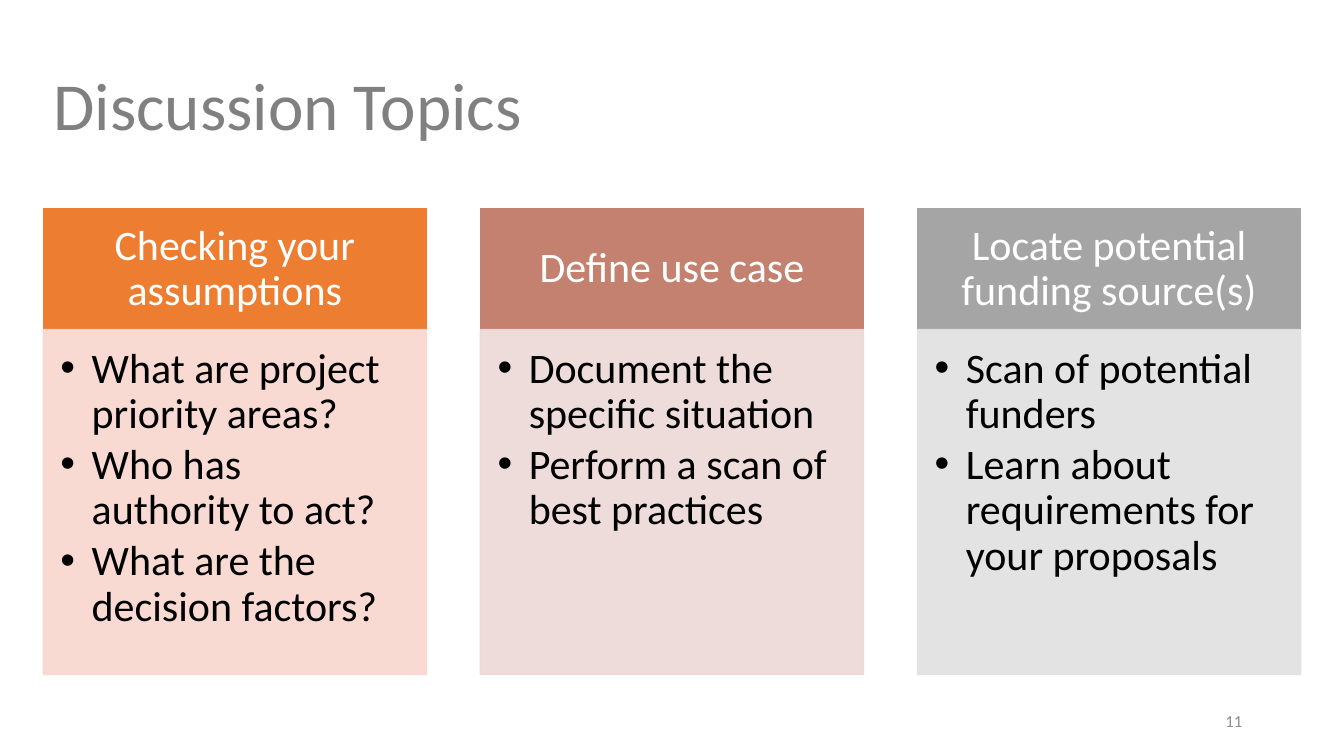
from dataclasses import dataclass

from lxml import etree
from pptx import Presentation
from pptx import util as u
from pptx.dml.color import RGBColor
from pptx.enum import shapes, text
from pptx.oxml.ns import qn


@dataclass(frozen=True)
class Theme:
    font: str = "Calibri"
    title_size: int = 48
    card_size: int = 30
    number_size: int = 12
    title: str = "808080"
    number: str = "8C8C8C"
    header_text: str = "FFFFFF"
    body_text: str = "000000"
    headers: tuple = ("ED7D31", "C48170", "A5A5A5")
    bodies: tuple = ("F8D7CE", "EDD9D7", "E1E1E1")
    body_opacity: int = 90


THEME = Theme()
SLIDE_WIDTH, SLIDE_HEIGHT = 13.33, 7.5
MARGIN, CONTENT_WIDTH = 0.43, 12.47
CARD_WIDTH = 3.8
CARD_TOP, HEADER_HEIGHT, BODY_HEIGHT = 2.07, 1.2, 3.42
BULLET_INDENT = 0.31

CARDS = (
    ("Checking your assumptions", (
        "What are project priority areas?",
        "Who has authority to act?",
        "What are the decision factors?",
    )),
    ("Define use case", (
        "Document the specific situation",
        "Perform a scan of best practices",
    )),
    ("Locate potential funding source(s)", (
        "Scan of potential funders",
        "Learn about requirements for your proposals",
    )),
)


def place(shape, left, top, width, height):
    shape.left, shape.top = u.Inches(left), u.Inches(top)
    shape.width, shape.height = u.Inches(width), u.Inches(height)


def write(paragraph, words, size, color, align, space_after=0, spacing=0.9):
    paragraph.alignment = align
    paragraph.line_spacing = spacing
    paragraph.space_before = u.Pt(0)
    paragraph.space_after = u.Pt(space_after)
    run = paragraph.add_run()
    run.text = words
    run.font.name = THEME.font
    run.font.size = u.Pt(size)
    run.font.color.rgb = RGBColor.from_string(color)


def add_bullet(paragraph):
    properties = paragraph._p.get_or_add_pPr()
    indent = u.Inches(BULLET_INDENT)
    properties.set("marL", str(indent))
    properties.set("indent", str(-indent))
    etree.SubElement(properties, qn("a:buFont")).set("typeface", "Arial")
    etree.SubElement(properties, qn("a:buChar")).set("char", "•")


def set_opacity(shape, percent):
    for color in shape._element.spPr.iter(qn("a:srgbClr")):
        etree.SubElement(color, qn("a:alpha")).set("val", str(percent * 1000))


def add_panel(slide, box, color, insets, anchor):
    panel = slide.shapes.add_shape(
        shapes.MSO_SHAPE.RECTANGLE, *(u.Inches(length) for length in box))
    panel.shadow.inherit = False
    panel.fill.solid()
    panel.fill.fore_color.rgb = RGBColor.from_string(color)
    panel.line.color.rgb = RGBColor.from_string(color)
    panel.line.width = u.Pt(1)
    frame = panel.text_frame
    frame.word_wrap = True
    frame.vertical_anchor = anchor
    (frame.margin_left, frame.margin_top,
     frame.margin_right, frame.margin_bottom) = map(u.Inches, insets)
    return panel


def add_header(slide, left, words, color):
    header = add_panel(slide, (left, CARD_TOP, CARD_WIDTH, HEADER_HEIGHT), color,
                       (0.23, 0.13, 0.23, 0.13), text.MSO_ANCHOR.MIDDLE)
    write(header.text_frame.paragraphs[0], words, THEME.card_size,
          THEME.header_text, text.PP_ALIGN.CENTER)


def add_list(slide, left, items, color):
    top = CARD_TOP + HEADER_HEIGHT
    body = add_panel(slide, (left, top, CARD_WIDTH, BODY_HEIGHT), color,
                     (0.17, 0.17, 0.23, 0.26), text.MSO_ANCHOR.TOP)
    set_opacity(body, THEME.body_opacity)
    frame = body.text_frame
    for index, item in enumerate(items):
        paragraph = frame.add_paragraph() if index else frame.paragraphs[0]
        paragraph.level = 1
        write(paragraph, item, THEME.card_size, THEME.body_text,
              text.PP_ALIGN.LEFT, space_after=4)
        add_bullet(paragraph)


def add_title(slide, words):
    title = slide.shapes.title
    place(title, MARGIN, 0.35, CONTENT_WIDTH, 1.45)
    title.text_frame.vertical_anchor = text.MSO_ANCHOR.MIDDLE
    write(title.text_frame.paragraphs[0], words, THEME.title_size,
          THEME.title, text.PP_ALIGN.LEFT)


def add_number(slide, words):
    number = slide.shapes.add_textbox(0, 0, 0, 0)
    place(number, 9.42, 6.95, 3, 0.4)
    number.text_frame.word_wrap = True
    number.text_frame.vertical_anchor = text.MSO_ANCHOR.MIDDLE
    write(number.text_frame.paragraphs[0], words, THEME.number_size,
          THEME.number, text.PP_ALIGN.RIGHT, space_after=6, spacing=1.0)


def main():
    presentation = Presentation()
    presentation.slide_width = u.Inches(SLIDE_WIDTH)
    presentation.slide_height = u.Inches(SLIDE_HEIGHT)
    slide = presentation.slides.add_slide(
        presentation.slide_layouts.get_by_name("Title Only"))
    add_title(slide, "Discussion Topics")
    pitch = (CONTENT_WIDTH - CARD_WIDTH) / (len(CARDS) - 1)
    for column, (heading, items) in enumerate(CARDS):
        left = MARGIN + column * pitch
        add_header(slide, left, heading, THEME.headers[column])
        add_list(slide, left, items, THEME.bodies[column])
    add_number(slide, "11")
    presentation.save("out.pptx")


if __name__ == "__main__":
    main()
